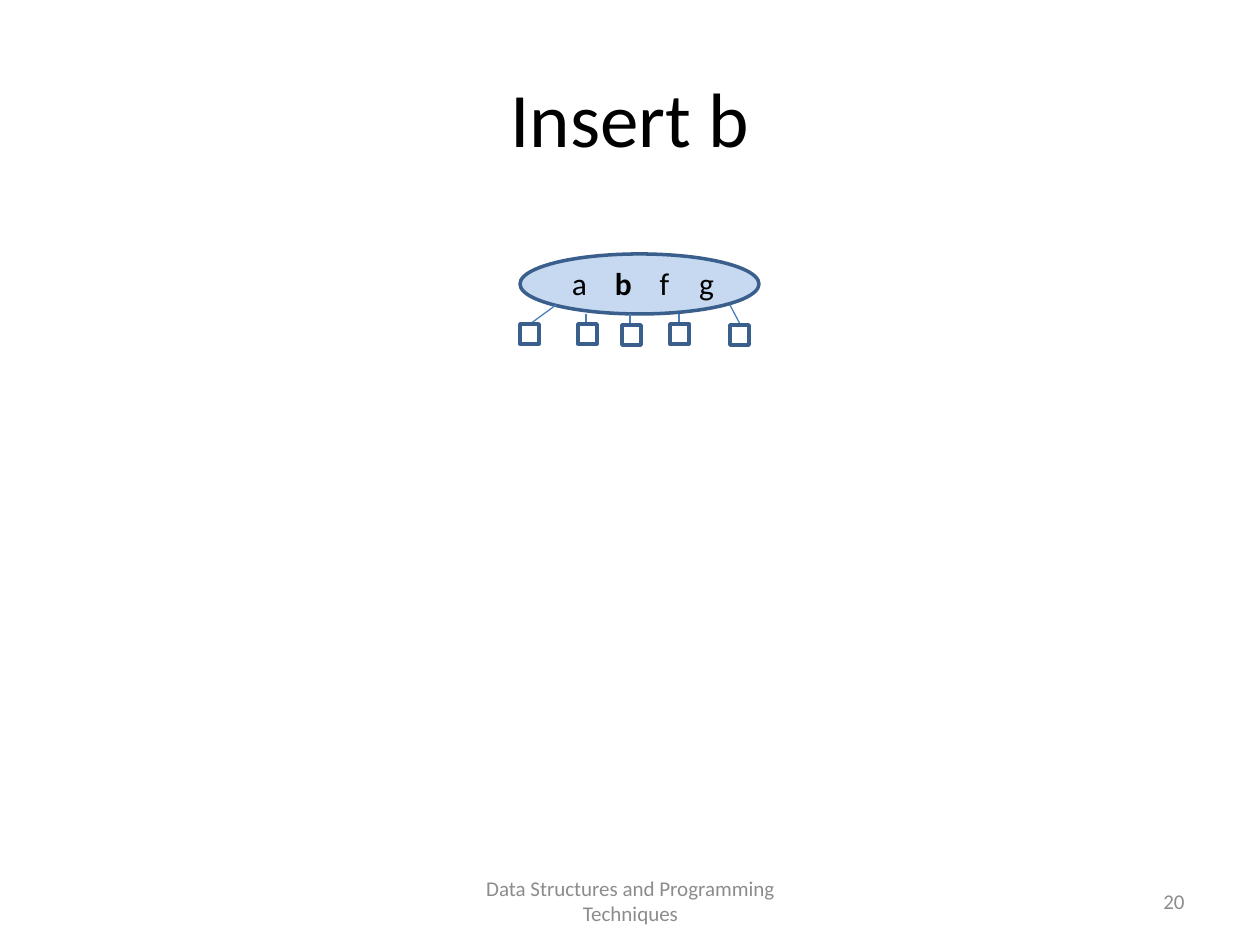
from dataclasses import dataclass

from lxml import etree
from pptx import Presentation
from pptx import util as u
from pptx.dml.color import RGBColor
from pptx.enum import shapes, text
from pptx.oxml import ns

EMU_PER_PX = 914400 / 126


def px(length):
    return u.Emu(round(length * EMU_PER_PX))


@dataclass(frozen=True)
class Theme:
    font: str = "Calibri"
    ink: str = "000000"
    muted: str = "8C8C8C"
    node_fill: str = "C6D9F1"
    outline: str = "3A5F8C"
    branch: str = "4B7EBC"
    title_size: int = 44
    key_size: int = 18
    footer_size: int = 12
    outline_width: float = 2
    branch_width: float = 0.75


class TreeSlide:
    def __init__(self, deck, theme):
        self.theme = theme
        self.shapes = deck.slides.add_slide(deck.slide_layouts[6]).shapes

    def label(self, box, runs, size, color, align, anchor=text.MSO_ANCHOR.MIDDLE):
        """Add a text box from (wording, bold) runs and return its paragraph."""
        frame = self.shapes.add_textbox(*map(px, box)).text_frame
        frame.word_wrap = True
        frame.vertical_anchor = anchor
        paragraph = frame.paragraphs[0]
        paragraph.alignment = align
        for wording, bold in runs:
            run = paragraph.add_run()
            run.text = wording
            style = {"name": self.theme.font, "size": u.Pt(size), "bold": bold}
            for attribute, value in style.items():
                setattr(run.font, attribute, value)
            run.font.color.rgb = RGBColor.from_string(color)
        return paragraph

    def keys(self, box, letters, centres, new_key):
        """Centre each letter on a tab stop; the inserted key is bold."""
        runs = [("\t" + letter, letter == new_key) for letter in letters]
        paragraph = self.label(box, runs, self.theme.key_size, self.theme.ink,
                               text.PP_ALIGN.LEFT, text.MSO_ANCHOR.TOP)
        stops = etree.SubElement(paragraph._p.get_or_add_pPr(), ns.qn("a:tabLst"))
        for centre in centres:
            etree.SubElement(stops, ns.qn("a:tab"), pos=str(px(centre)), algn="ctr")

    def outlined(self, kind, box, fill=None):
        shape = self.shapes.add_shape(kind, *map(px, box))
        shape.shadow.inherit = False
        if fill:
            shape.fill.solid()
            shape.fill.fore_color.rgb = RGBColor.from_string(fill)
        else:
            shape.fill.background()
        self.stroke(shape.line, self.theme.outline, self.theme.outline_width)

    def branch(self, start, end):
        line = self.shapes.add_connector(shapes.MSO_CONNECTOR.STRAIGHT,
                                         *map(px, (*start, *end)))
        self.stroke(line.line, self.theme.branch, self.theme.branch_width)
        etree.SubElement(line._element.spPr, ns.qn("a:effectLst"))

    def stroke(self, line, color, width):
        line.color.rgb = RGBColor.from_string(color)
        line.width = u.Pt(width)


def main():
    deck = Presentation()
    deck.slide_width, deck.slide_height = px(1260), px(945)
    theme = Theme()
    slide = TreeSlide(deck, theme)
    align = text.PP_ALIGN

    slide.label((63, 38, 1134, 157), [("Insert b", False)],
                theme.title_size, theme.ink, align.CENTER)
    footers = [
        ((431, 876, 399, 50), "Data Structures and Programming Techniques", align.CENTER),
        ((903, 876, 294, 50), "20", align.RIGHT),
    ]
    for box, wording, alignment in footers:
        slide.label(box, [(wording, False)], theme.footer_size, theme.muted, alignment)

    slide.outlined(shapes.MSO_SHAPE.OVAL, (520, 254, 239, 60), theme.node_fill)
    slide.keys((539, 258, 207, 50), "abfg", (28, 72, 113, 155), new_key="b")

    # Each child: left and top of its leaf, then both ends of its branch.
    children = [
        (520, 324, (556, 305), (530, 324)),
        (578, 324, (586, 314), (586, 324)),
        (622, 325, (630, 314), (630, 324)),
        (670, 324, (679, 314), (679, 324)),
        (730, 325, (730, 305), (740, 324)),
    ]
    for left, top, start, end in children:
        slide.branch(start, end)
        slide.outlined(shapes.MSO_SHAPE.RECTANGLE, (left, top, 19, 20))

    deck.save("out.pptx")


if __name__ == "__main__":
    main()
